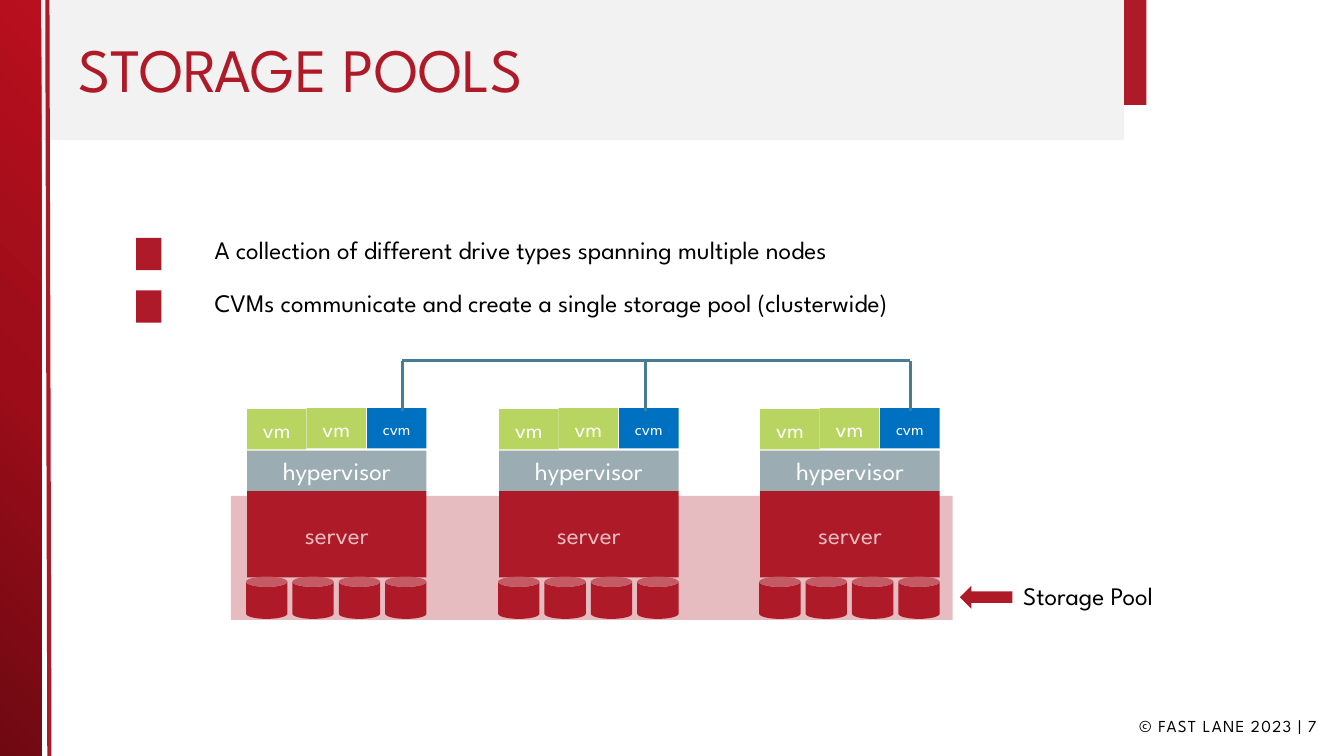
from lxml import etree
from pptx import Presentation
from pptx.dml.color import RGBColor
from pptx.enum import shapes, text
from pptx.oxml import parse_xml
from pptx.oxml.ns import nsdecls, qn
from pptx.util import Inches, Pt

# Content
TITLE = "STORAGE POOLS"
POINTS = ["A collection of different drive types spanning multiple nodes",
          "CVMs communicate and create a single storage pool (clusterwide)"]
POOL_LABEL = "Storage Pool"
FOOTER = "© FAST LANE 2023 | 7"
NODE_LEFTS = [2.45, 4.95, 7.54]
CVM_LINK_XS = [3.99, 6.4, 9.03]
DRIVES_PER_NODE = 4
# label, left offset, top, width, height, fill, size
NODE_PARTS = [
    ("server", 0, 4.87, 1.78, 0.86, "red", "body"),
    ("hypervisor", 0, 4.47, 1.78, 0.4, "gray", "body"),
    ("vm", 0, 4.06, 0.59, 0.4, "green", "vm"),
    ("vm", 0.59, 4.05, 0.59, 0.4, "green", "vm"),
    ("cvm", 1.19, 4.05, 0.59, 0.4, "blue", "small"),
]

THEME = {
    "font": "League Spartan",
    "color": {"red": "AE1A27", "gray": "9BACB2", "green": "B7D560", "blue": "0070C0",
              "link": "477C97", "band": "F2F2F2", "black": "000000", "white": "FFFFFF"},
    "strip": [(0, "6E0912"), (50, "9C0D19"), (100, "B90F1E")],
    "size": {"title": 44, "body": 18, "vm": 16, "small": 12},
}

prs = Presentation()
prs.slide_width, prs.slide_height = Inches(13.33), Inches(7.5)
slide = prs.slides.add_slide(prs.slide_layouts[6])


def color(name):
    return RGBColor.from_string(THEME["color"][name])


def write(shape, words, size, ink, align, anchor):
    frame = shape.text_frame
    frame.word_wrap = True
    frame.vertical_anchor = anchor
    line = frame.paragraphs[0]
    line.text = words
    line.alignment = align
    line.font.name = THEME["font"]
    line.font.size = Pt(THEME["size"][size])
    line.font.color.rgb = color(ink)
    return line


def add_text(words, left, top, width, height, size="body", ink="black",
             align=text.PP_ALIGN.LEFT, anchor=text.MSO_ANCHOR.TOP):
    box = slide.shapes.add_textbox(Inches(left), Inches(top), Inches(width), Inches(height))
    return write(box, words, size, ink, align, anchor)


def add_block(left, top, width, height, fill="red", kind=shapes.MSO_SHAPE.RECTANGLE):
    block = slide.shapes.add_shape(kind, Inches(left), Inches(top), Inches(width), Inches(height))
    block.shadow.inherit = False
    block.fill.solid()
    block.fill.fore_color.rgb = color(fill)
    block.line.fill.background()
    return block


def add_line(x1, y1, x2, y2, ink="link", weight=2):
    line = slide.shapes.add_connector(shapes.MSO_CONNECTOR.STRAIGHT,
                                      Inches(x1), Inches(y1), Inches(x2), Inches(y2))
    line.line.color.rgb = color(ink)
    line.line.width = Pt(weight)
    etree.SubElement(line._element.spPr, qn("a:effectLst"))


# Title band, accent and left strip
add_block(0, 0, 11.15, 1.39, "band")
add_block(11.15, 0, 0.22, 1.04)
add_line(0.49, 7.5, 0.47, 0, "red", 3)
strip = add_block(0, 0, 0.41, 7.5)
stops = "".join(f'<a:gs pos="{pos * 1000}"><a:srgbClr val="{rgb}"/></a:gs>'
                for pos, rgb in THEME["strip"])
solid = strip._element.spPr.find(qn("a:solidFill"))
solid.getparent().replace(solid, parse_xml(
    f'<a:gradFill {nsdecls("a")} rotWithShape="1"><a:gsLst>{stops}</a:gsLst>'
    '<a:path path="circle"><a:fillToRect t="100000" r="100000"/></a:path></a:gradFill>'))

title = add_text(TITLE, 0.68, 0.4, 9.99, 0.64, "title", "red", anchor=text.MSO_ANCHOR.MIDDLE)
title.line_spacing = 0.9

# Points with square markers
for row, point in enumerate(POINTS):
    top = 2.28 + row * 0.52
    add_text(point, 2.03, top, 8.47, 0.4)
    add_block(1.35, top + 0.08, 0.25, 0.32)

# Nodes
for node_left in NODE_LEFTS:
    for label, offset, top, width, height, fill, size in NODE_PARTS:
        part = add_block(node_left + offset, top, width, height, fill)
        write(part, label, size, "white", text.PP_ALIGN.CENTER, text.MSO_ANCHOR.MIDDLE)
    for drive in range(DRIVES_PER_NODE):
        add_block(node_left + drive * 0.46 - 0.01, 5.72, 0.41, 0.42, kind=shapes.MSO_SHAPE.CAN)

# Links between the CVMs
for x in CVM_LINK_XS:
    add_line(x, 4.08, x, 3.58)
add_line(CVM_LINK_XS[-1], 3.58, CVM_LINK_XS[0], 3.58)

# Translucent storage pool and its label
pool = add_block(2.29, 4.92, 7.16, 1.23)
pool_color = pool._element.spPr.find(qn("a:solidFill"))[0]
etree.SubElement(pool_color, qn("a:alpha"), val="29000")
add_block(9.52, 5.81, 0.52, 0.23, kind=shapes.MSO_SHAPE.LEFT_ARROW)
add_text(POOL_LABEL, 10.05, 5.71, 3.03, 0.4)

# Footer
footer = add_text(FOOTER, 10.84, 7.03, 2.32, 0.34, "small",
                  align=text.PP_ALIGN.RIGHT, anchor=text.MSO_ANCHOR.MIDDLE)
footer.runs[0].font._element.set("spc", "90")

prs.save("out.pptx")
